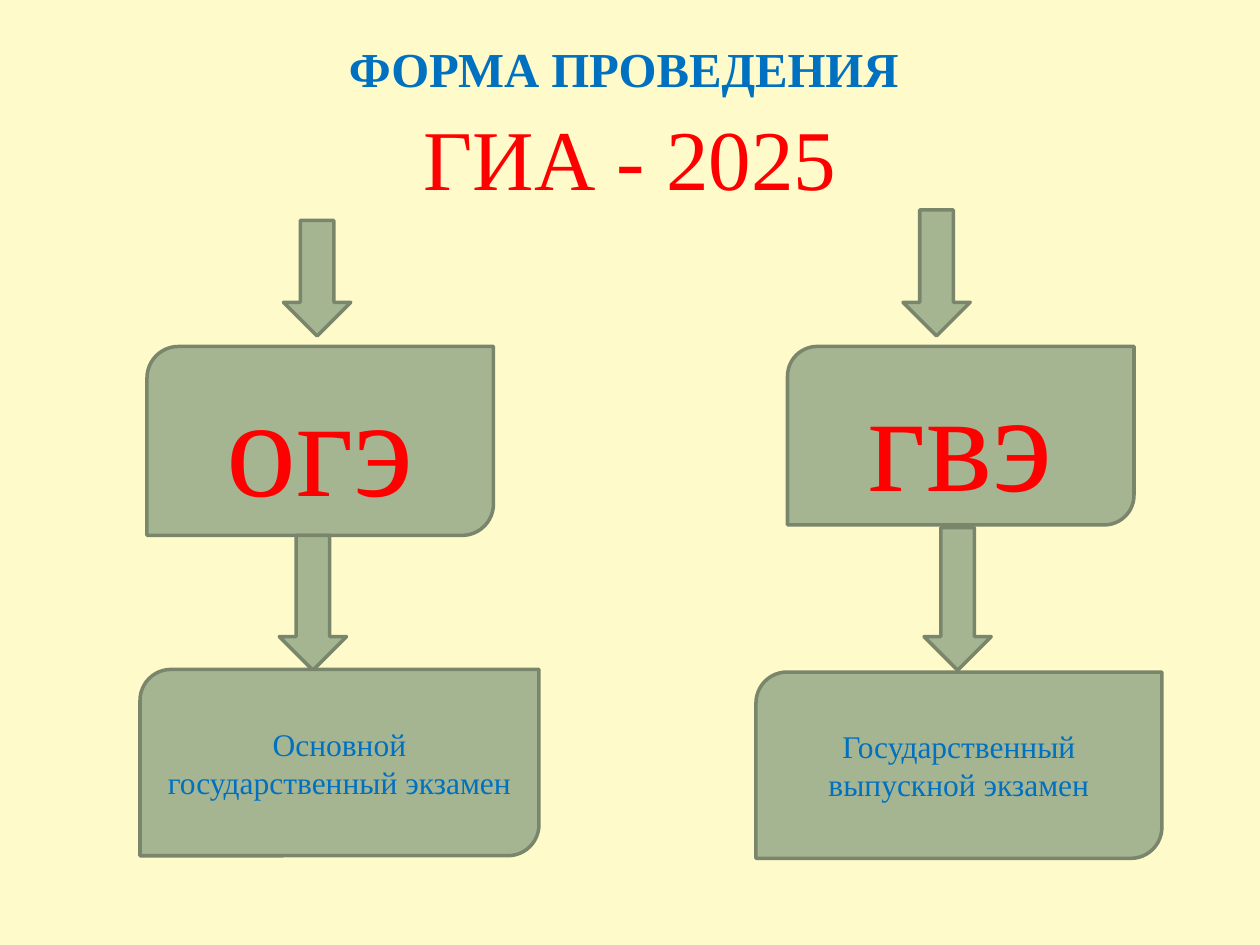
from pptx import Presentation
from pptx.dml.color import RGBColor
from pptx.enum.shapes import MSO_SHAPE
from pptx.enum.text import MSO_ANCHOR, PP_ALIGN
from pptx.util import Pt

ARROW = MSO_SHAPE.DOWN_ARROW
CARD = MSO_SHAPE.ROUND_2_DIAG_RECTANGLE
MIDDLE = MSO_ANCHOR.MIDDLE
CENTER = PP_ALIGN.CENTER

FONT = "Times New Roman"
COLORS = {
    "background": "FEFAC9",
    "fill": "A5B592",
    "line": "7A866C",
    "blue": "0070C0",
    "red": "FF0000",
}
TITLE = [
    ("ФОРМА ПРОВЕДЕНИЯ ", 27.9, "blue", True),
    ("ГИА - 2025", 48.6, "red", False),
]
ARROW_WIDTH = 38.4
EXAMS = [
    {
        "arrows": [(162, 126, 66), (159.6, 306, 77)],
        "cards": [
            ("огэ", 80, "red", (84, 198, 198, 108)),
            ("Основной государственный экзамен", 18, "blue", (80, 382.5, 228, 106.5)),
        ],
    },
    {
        "arrows": [(516, 120, 72), (528, 301.5, 81.5)],
        "cards": [
            ("гвэ", 80, "red", (450, 198, 198, 102)),
            ("Государственный выпускной экзамен", 18, "blue", (432, 384, 232, 106.5)),
        ],
    },
]


def color(name):
    return RGBColor.from_string(COLORS[name])


def add_span(para, text, size, tint, bold=False):
    span = para.add_run()
    span.text = text
    span.font.name = FONT
    span.font.size = Pt(size)
    span.font.bold = bold
    span.font.color.rgb = color(tint)


def add_figure(page, kind, place):
    figure = page.shapes.add_shape(kind, *map(Pt, place))
    figure.shadow.inherit = False
    figure.fill.solid()
    figure.fill.fore_color.rgb = color("fill")
    figure.line.color.rgb = color("line")
    figure.line.width = Pt(2)
    return figure


def center_text(shape):
    frame = shape.text_frame
    frame.word_wrap = True
    frame.vertical_anchor = MIDDLE
    para = frame.paragraphs[0]
    para.alignment = CENTER
    return para


def add_title(page):
    box = page.shapes.add_textbox(Pt(36), Pt(21.6), Pt(648), Pt(90))
    para = center_text(box)
    para.line_spacing = 1.08
    box.text_frame.margin_top = Pt(5)
    box.text_frame.margin_bottom = 0
    for index, line in enumerate(TITLE):
        if index:
            para.add_line_break()
        add_span(para, *line)


def main():
    deck = Presentation()
    deck.slide_width, deck.slide_height = Pt(720), Pt(540)
    page = deck.slides.add_slide(deck.slide_layouts[6])
    page.background.fill.solid()
    page.background.fill.fore_color.rgb = color("background")
    add_title(page)
    for exam in EXAMS:
        for arrow, card in zip(exam["arrows"], exam["cards"]):
            left, top, height = arrow
            add_figure(page, ARROW, (left, top, ARROW_WIDTH, height))
            text, size, tint, place = card
            add_span(center_text(add_figure(page, CARD, place)), text, size, tint)
    deck.save("out.pptx")


if __name__ == "__main__":
    main()
